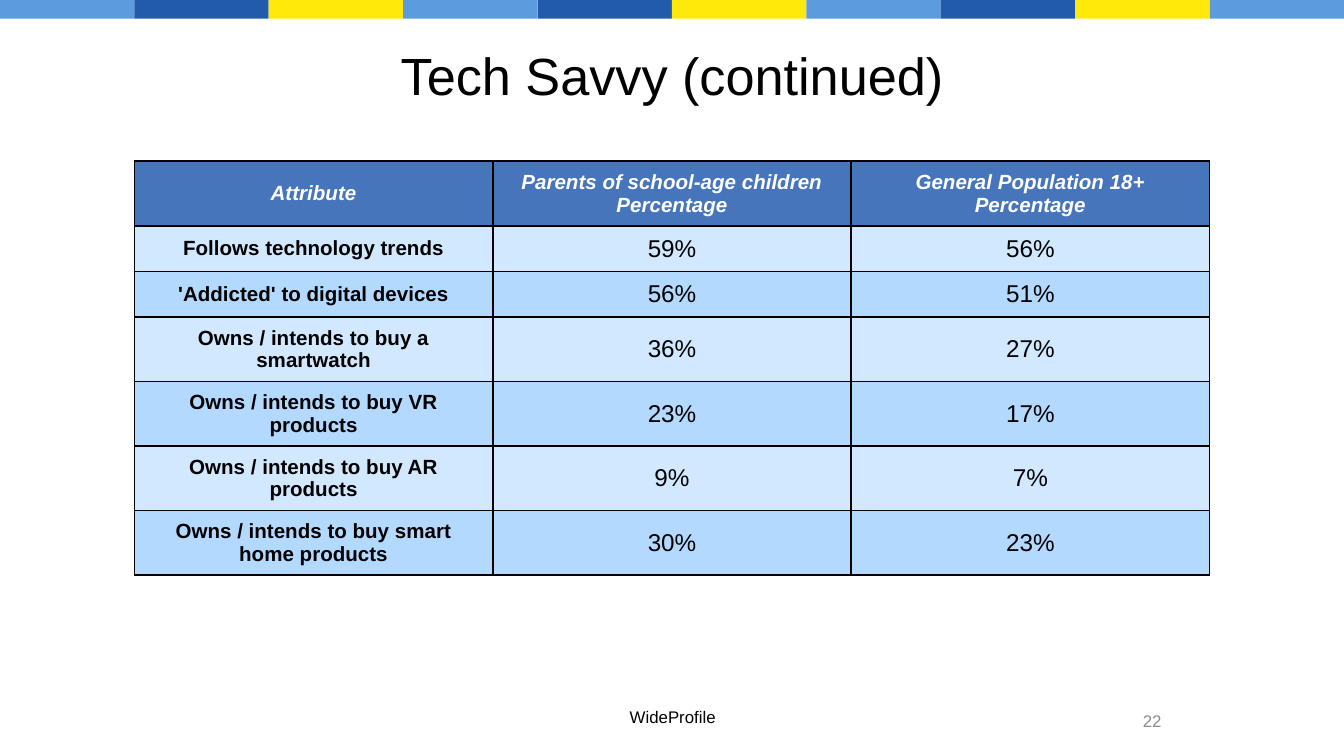
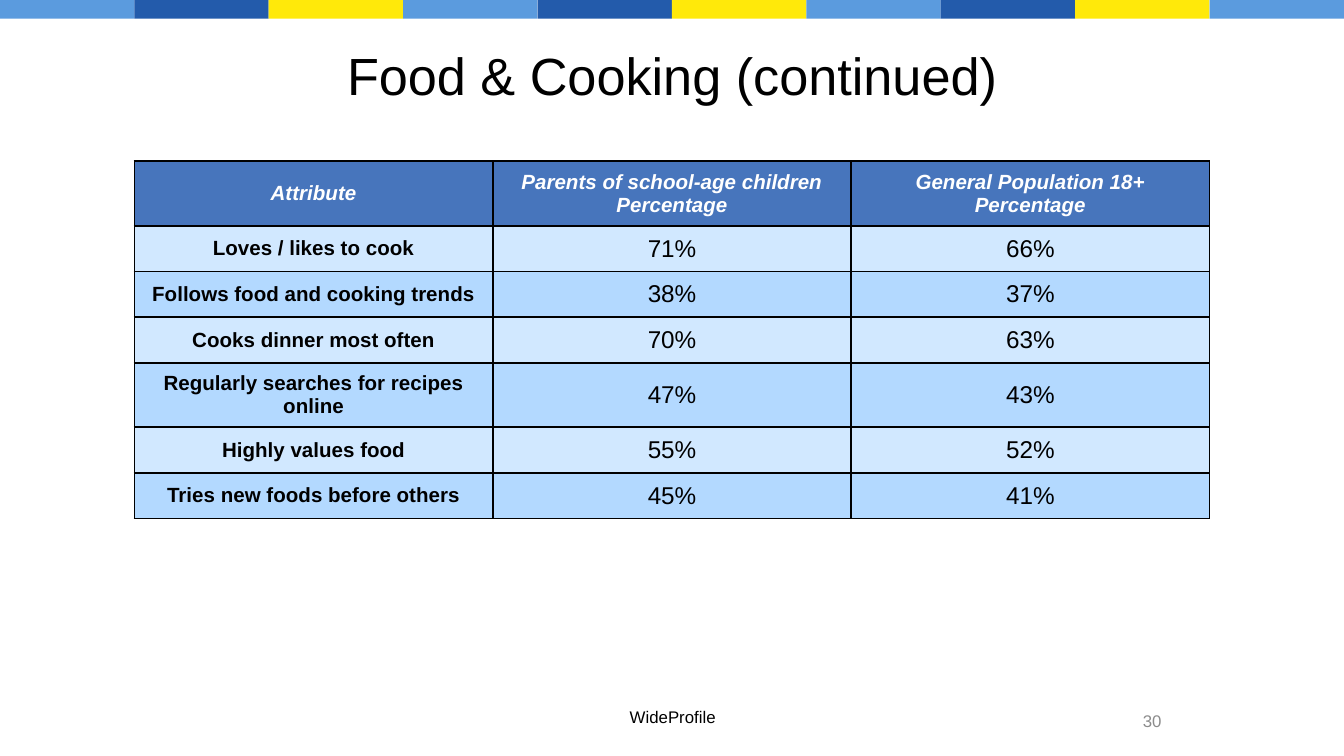
from dataclasses import dataclass
from itertools import cycle, islice

from lxml.etree import SubElement
from pptx import Presentation
from pptx.dml.color import RGBColor as RGB
from pptx.enum.shapes import MSO_SHAPE as Shape
from pptx.enum.text import MSO_ANCHOR as Anchor, PP_ALIGN as Align
from pptx.oxml import parse_xml
from pptx.oxml.ns import nsdecls, qn
from pptx.util import Inches, Pt

FOOTER = "WideProfile"
HEAD = (
    "Attribute",
    "Parents of school-age children Percentage",
    "General Population 18+ Percentage",
)
SLIDES = [
    {
        "title": "Tech Savvy (continued)",
        "number": 22,
        "rows": [
            ("Follows technology trends", 59, 56),
            ("'Addicted' to digital devices", 56, 51),
            ("Owns / intends to buy a smartwatch", 36, 27),
            ("Owns / intends to buy VR products", 23, 17),
            ("Owns / intends to buy AR products", 9, 7),
            ("Owns / intends to buy smart home products", 30, 23),
        ],
    },
    {
        "title": "Food & Cooking (continued)",
        "number": 30,
        "rows": [
            ("Loves / likes to cook", 71, 66),
            ("Follows food and cooking trends", 38, 37),
            ("Cooks dinner most often", 70, 63),
            ("Regularly searches for recipes online", 47, 43),
            ("Highly values food", 55, 52),
            ("Tries new foods before others", 45, 41),
        ],
    },
]


@dataclass(frozen=True)
class Theme:
    font: str = "Arial"
    ink: str = "000000"
    white: str = "FFFFFF"
    grey: str = "8C8C8C"
    head: str = "4775BC"
    bands: tuple = ("D1E8FF", "B3D9FF")
    strip: tuple = ("5B9BDE", "235BAB", "FFE90A")
    title: int = 28
    value: int = 13
    label: int = 11
    small: int = 9


T = Theme()
WIDE = 10
HIGH = WIDE * 9 / 16
TILES, TILE_H = 10, 0.14
LEFT, TOP, SPAN = 0.1 * WIDE, 1.2, 0.8 * WIDE
ROW, TALL = 0.34, 0.48
LINE_MAX = 31  # longest label, in letters, that fits on one line
SIDE, EDGE = Inches(0.09), Pt(4)

CELL_FMT = dict(
    margin_left=SIDE,
    margin_right=SIDE,
    margin_top=EDGE,
    margin_bottom=EDGE,
    vertical_anchor=Anchor.MIDDLE,
)
HEAD_FMT = dict(size=T.label, color=T.white, bold=True, italic=True)
LABEL_FMT = dict(size=T.label, color=T.ink, bold=True)
VALUE_FMT = dict(size=T.value, color=T.ink)


def write(frame, text, size, color, align=Align.CENTER, **style):
    par = frame.paragraphs[0]
    par.alignment = align
    run = par.add_run()
    run.text = text
    run.font.color.rgb = RGB.from_string(color)
    for name, value in dict(name=T.font, size=Pt(size), **style).items():
        setattr(run.font, name, value)


def label(slide, box, text, **fmt):
    frame = slide.shapes.add_textbox(*map(Inches, box)).text_frame
    frame.word_wrap = True
    frame.vertical_anchor = Anchor.MIDDLE
    write(frame, text, **fmt)


def strip(slide):
    """Draw the row of coloured tiles along the top edge."""
    step = WIDE / TILES
    for i, color in enumerate(islice(cycle(T.strip), TILES)):
        box = map(Inches, (i * step, 0, step, TILE_H))
        tile = slide.shapes.add_shape(Shape.RECTANGLE, *box)
        tile.shadow.inherit = False
        tile.fill.solid()
        tile.fill.fore_color.rgb = RGB.from_string(color)
        tile.line.fill.background()


def border(cell):
    props = cell._tc.get_or_add_tcPr()
    for i, side in enumerate("LRTB"):
        line = parse_xml(f'<a:ln{side} {nsdecls("a")} w="{Pt(1)}"/>')
        fill = SubElement(line, qn("a:solidFill"))
        SubElement(fill, qn("a:srgbClr"), val=T.ink)
        props.insert(i, line)


def paint(cell, text, fill, fmt):
    for name, value in CELL_FMT.items():
        setattr(cell, name, value)
    cell.fill.solid()
    cell.fill.fore_color.rgb = RGB.from_string(fill)
    border(cell)
    write(cell.text_frame, text, **fmt)


def grid(slide, rows):
    lines = [(HEAD, T.head, [HEAD_FMT] * len(HEAD))]
    for (name, *nums), fill in zip(rows, cycle(T.bands)):
        texts = [name, *(f"{n}%" for n in nums)]
        lines.append((texts, fill, [LABEL_FMT] + [VALUE_FMT] * len(nums)))
    highs = [
        TALL if max(map(len, texts)) > LINE_MAX else ROW for texts, _, _ in lines
    ]
    box = map(Inches, (LEFT, TOP, SPAN, sum(highs)))
    table = slide.shapes.add_table(len(lines), len(HEAD), *box).table
    table.first_row = table.horz_banding = False
    for row, high, (texts, fill, fmts) in zip(table.rows, highs, lines):
        row.height = Inches(high)
        for cell, text, fmt in zip(row.cells, texts, fmts):
            paint(cell, text, fill, fmt)


def build(deck, title, number, rows):
    slide = deck.slides.add_slide(deck.slide_layouts[6])
    strip(slide)
    label(slide, (0.05 * WIDE, 0.23, 0.9 * WIDE, 0.65), title,
          size=T.title, color=T.ink)
    grid(slide, rows)
    label(slide, (4.23, 5.21, 1.55, 0.25), FOOTER, size=T.small, color=T.ink)
    label(slide, (7.46, 5.21, 1.28, 0.3), str(number),
          size=T.small, color=T.grey, align=Align.RIGHT)


def main():
    deck = Presentation()
    deck.slide_width, deck.slide_height = Inches(WIDE), Inches(HIGH)
    for page in SLIDES:
        build(deck, **page)
    deck.save("out.pptx")


if __name__ == "__main__":
    main()
